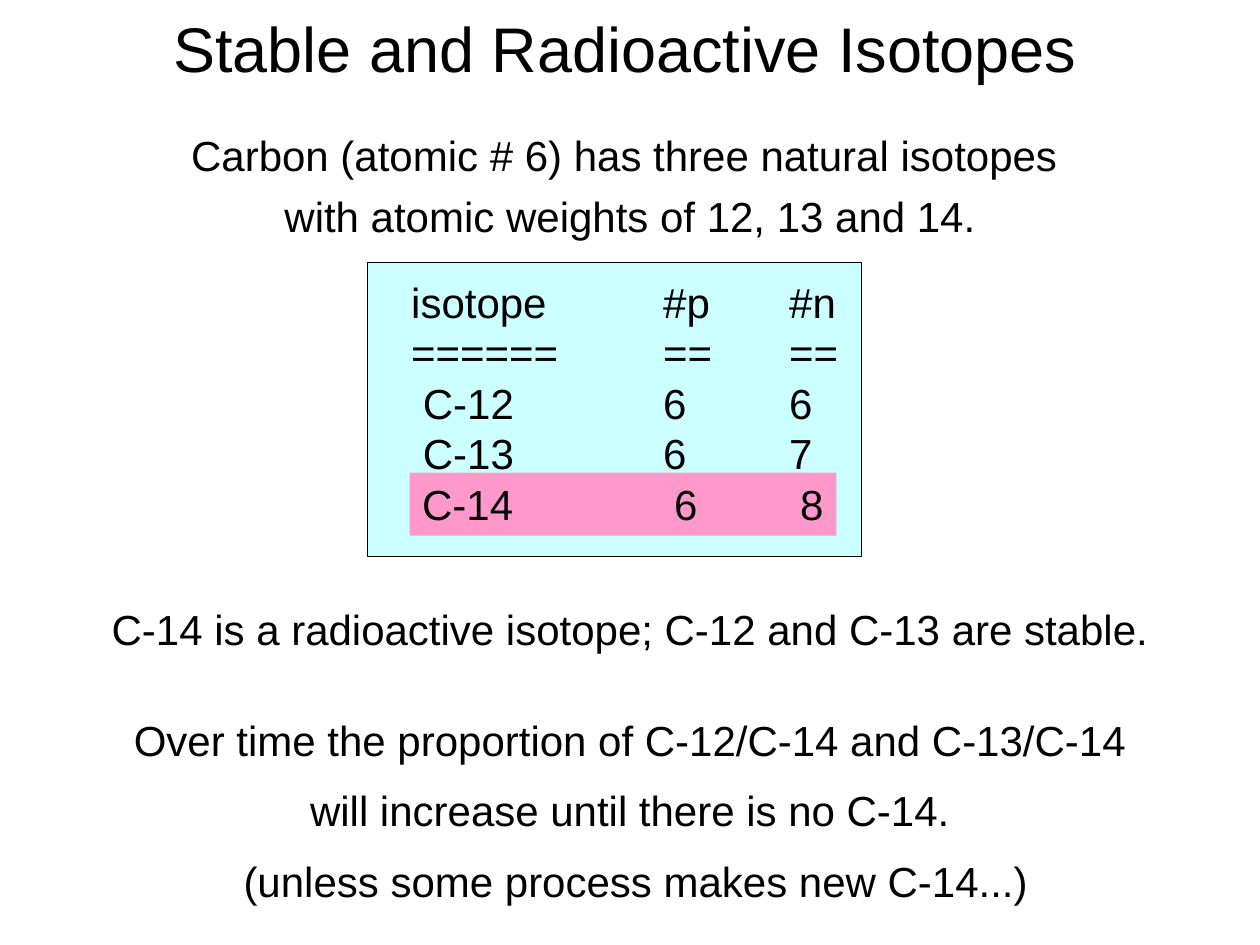
from pptx import Presentation
from pptx.dml.color import RGBColor
from pptx.enum.shapes import MSO_SHAPE
from pptx.enum.text import MSO_ANCHOR, MSO_AUTO_SIZE, PP_ALIGN
from pptx.oxml.ns import qn
from pptx.util import Cm, Pt
from lxml import etree

RECTANGLE = MSO_SHAPE.RECTANGLE
MIDDLE, TOP = MSO_ANCHOR.MIDDLE, MSO_ANCHOR.TOP
NO_FIT = MSO_AUTO_SIZE.NONE
LEFT, CENTER = PP_ALIGN.LEFT, PP_ALIGN.CENTER

FONT, INK, WHITE, CYAN, PINK = "Arial", "000000", "FFFFFF", "CCFFFF", "FF99CC"
BODY_SIZE, TITLE_SIZE, LINE_HEIGHT = 24, 36, 28.8
TAB_STOPS = (5.08, 7.62)

TITLE = "Stable and Radioactive Isotopes"
INTRODUCTION = [
    "Carbon (atomic # 6) has three natural isotopes ",
    "with atomic weights of 12, 13 and 14.",
]
STABLE_ROWS = [
    ("isotope", "#p", "#n"),
    ("======", "==", "=="),
    (" C-12", "6", "6"),
    (" C-13", "6", "7"),
]
RADIOACTIVE_ROWS = [("C-14", "6", "8")]
CONCLUSION = [
    "C-14 is a radioactive isotope; C-12 and C-13 are stable. ",
    "Over time the proportion of C-12/C-14 and C-13/C-14 ",
    "will increase until there is no C-14. ",
    "(unless some process makes new C-14...)",
]


def color(hex_value):
    """Return the colour for a hex string."""
    return RGBColor.from_string(hex_value)


def paint(shape, fill):
    """Give a shape a solid fill."""
    shape.fill.solid()
    shape.fill.fore_color.rgb = color(fill)


def place(shape, box):
    """Move and size a shape in centimetres."""
    shape.left, shape.top, shape.width, shape.height = map(Cm, box)


def write(paragraph, text, size, alignment):
    """Add one formatted run to an aligned paragraph."""
    paragraph.alignment = alignment
    run = paragraph.add_run()
    run.text = text
    run.font.name = FONT
    run.font.size = Pt(size)
    run.font.color.rgb = color(INK)


def add_text(slide, box, lines, alignment=CENTER, spacing=1.0, fill=None, wrap=True):
    """Add a text box with one paragraph per line and return its paragraphs."""
    shape = slide.shapes.add_textbox(*map(Cm, box))
    if fill:
        paint(shape, fill)
    frame = shape.text_frame
    frame.word_wrap = wrap
    frame.auto_size = NO_FIT
    frame.vertical_anchor = TOP
    for index, line in enumerate(lines):
        paragraph = frame.add_paragraph() if index else frame.paragraphs[0]
        write(paragraph, line, BODY_SIZE, alignment)
        paragraph.line_spacing = Pt(LINE_HEIGHT * spacing)
    return frame.paragraphs


def add_rows(slide, box, rows, **options):
    """Add rows whose columns line up on tab stops."""
    lines = ["\t".join(row) for row in rows]
    for paragraph in add_text(slide, box, lines, LEFT, **options):
        properties = paragraph._p.get_or_add_pPr()
        tab_list = etree.SubElement(properties, qn("a:tabLst"))
        for stop in TAB_STOPS:
            etree.SubElement(tab_list, qn("a:tab"), pos=str(int(Cm(stop))), algn="l")


def main():
    """Build the isotope slide."""
    presentation = Presentation()
    presentation.slide_width, presentation.slide_height = Cm(25.4), Cm(19.05)
    slide = presentation.slides.add_slide(presentation.slide_layouts[5])

    title = slide.shapes.title
    place(title, (0, 0, 25.2, 1.9))
    paint(title, WHITE)
    title.text_frame.auto_size = NO_FIT
    title.text_frame.vertical_anchor = MIDDLE
    write(title.text_frame.paragraphs[0], TITLE, TITLE_SIZE, CENTER)

    panel = slide.shapes.add_shape(RECTANGLE, *map(Cm, (7.41, 5.29, 9.95, 5.93)))
    panel.shadow.inherit = False
    paint(panel, CYAN)
    panel.line.color.rgb = color(INK)
    panel.line.width = Pt(0.25)

    add_text(slide, (1.06, 2.29, 23.28, 2.69), INTRODUCTION, spacing=1.2, fill=WHITE)
    add_rows(slide, (8.04, 5.45, 10.37, 5.33), STABLE_ROWS)
    conclusion = add_text(slide, (1.7, 11.63, 22.23, 6.76), CONCLUSION, spacing=1.4, fill=WHITE)
    conclusion[1].space_before = Pt(LINE_HEIGHT * 0.8)
    add_rows(slide, (8.26, 9.53, 8.6, 1.27), RADIOACTIVE_ROWS, fill=PINK, wrap=False)

    presentation.save("out.pptx")


if __name__ == "__main__":
    main()
